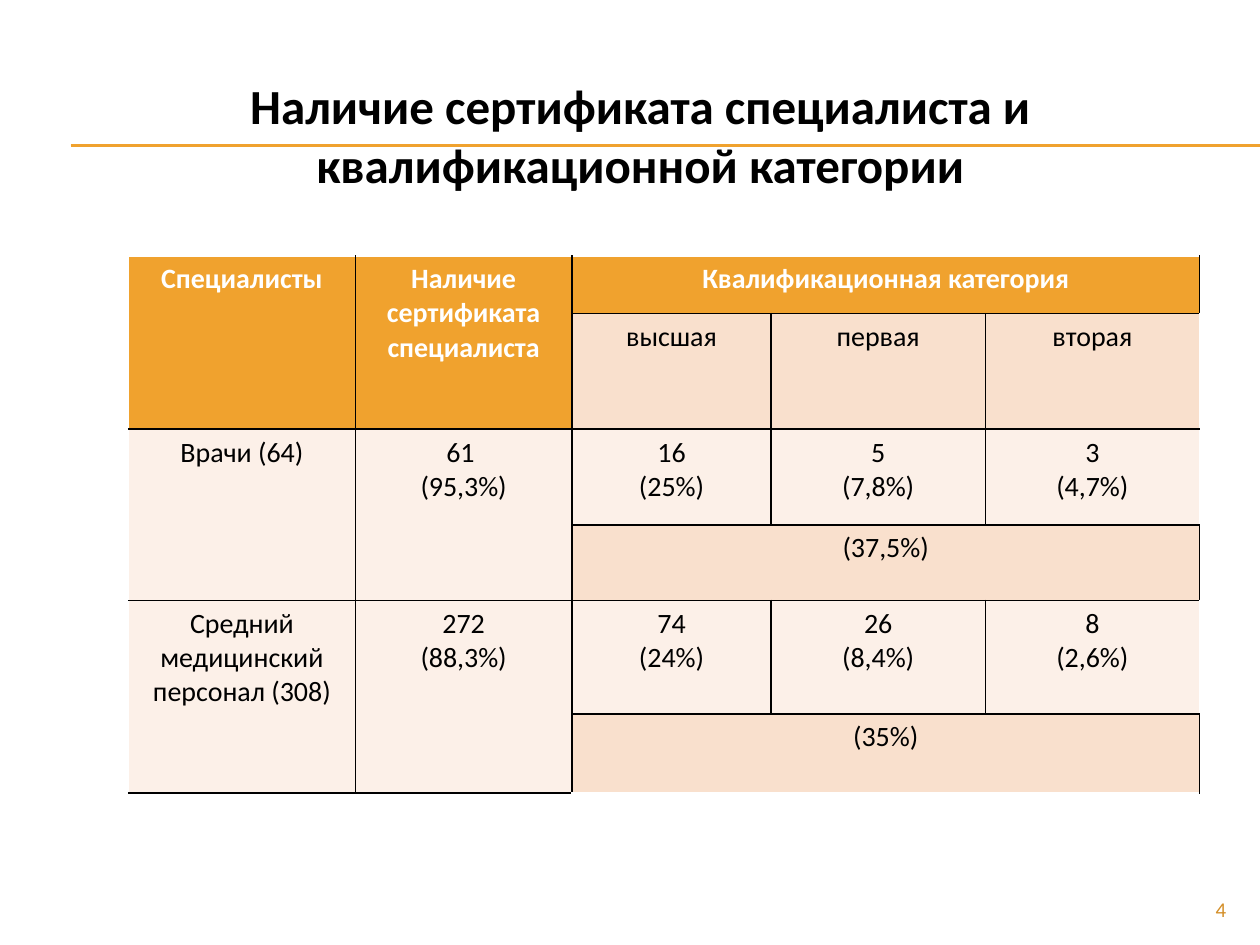
from lxml import etree
from pptx import Presentation
from pptx.dml.color import RGBColor
from pptx.enum.shapes import MSO_CONNECTOR
from pptx.enum.text import MSO_ANCHOR, PP_ALIGN
from pptx.oxml.ns import qn
from pptx.util import Inches, Pt

CENTER, RIGHT = PP_ALIGN.CENTER, PP_ALIGN.RIGHT
TOP, MIDDLE = MSO_ANCHOR.TOP, MSO_ANCHOR.MIDDLE
STRAIGHT = MSO_CONNECTOR.STRAIGHT

FONT = "Calibri"
ORANGE, DARK_ORANGE = "F0A22E", "D48F29"
PEACH, PALE_PEACH = "F9E0CD", "FCF0E8"
BLACK, WHITE = "000000", "FFFFFF"

TITLE = "Наличие сертификата специалиста и квалификационной категории"
PAGE_NUMBER = "4"
RULE_HEIGHTS = (1.15, 1.16)

TABLE_LEFT, TABLE_TOP = 1.02, 2.03
COLUMN_WIDTHS = [1.8, 1.72, 1.58, 1.7, 1.7]
ROW_HEIGHTS = [0.46, 0.89, 0.76, 0.6, 0.9, 0.63]

# Row, column, rows spanned, columns spanned, fill, text
CELLS = [
    (0, 0, 2, 1, ORANGE, "Специалисты"),
    (0, 1, 2, 1, ORANGE, "Наличие сертификата\nспециалиста"),
    (0, 2, 1, 3, ORANGE, "Квалификационная категория"),
    (1, 2, 1, 1, PEACH, "высшая"),
    (1, 3, 1, 1, PEACH, "первая"),
    (1, 4, 1, 1, PEACH, "вторая"),
    (2, 0, 2, 1, PALE_PEACH, "Врачи (64)"),
    (2, 1, 2, 1, PALE_PEACH, "61 \n(95,3%)"),
    (2, 2, 1, 1, PALE_PEACH, "16\n(25%)"),
    (2, 3, 1, 1, PALE_PEACH, "5\n(7,8%)"),
    (2, 4, 1, 1, PALE_PEACH, "3\n(4,7%)"),
    (3, 2, 1, 3, PEACH, "(37,5%)"),
    (4, 0, 2, 1, PALE_PEACH, "Средний медицинский персонал (308)"),
    (4, 1, 2, 1, PALE_PEACH, "272\n(88,3%)"),
    (4, 2, 1, 1, PALE_PEACH, "74\n(24%)"),
    (4, 3, 1, 1, PALE_PEACH, "26\n(8,4%)"),
    (4, 4, 1, 1, PALE_PEACH, "8\n(2,6%)"),
    (5, 2, 1, 3, PEACH, "(35%)"),
]


def color(hex_string):
    return RGBColor.from_string(hex_string)


def write(text_frame, text, size, text_color, bold=False, alignment=CENTER):
    text_frame.text = text
    for paragraph in text_frame.paragraphs:
        paragraph.alignment = alignment
        for run in paragraph.runs:
            run.font.name = FONT
            run.font.size = Pt(size)
            run.font.bold = bold
            run.font.color.rgb = color(text_color)


def add_text(slide, left, top, width, height, text, anchor, **style):
    box = slide.shapes.add_textbox(*map(Inches, (left, top, width, height)))
    box.text_frame.word_wrap = True
    box.text_frame.vertical_anchor = anchor
    write(box.text_frame, text, **style)


def add_rule(slide, height):
    rule = slide.shapes.add_connector(
        STRAIGHT, Inches(0.56), Inches(height), Inches(10), Inches(height))
    rule.line.color.rgb = color(ORANGE)
    rule.line.width = Pt(0.75)
    etree.SubElement(rule._element.spPr, qn("a:effectLst"))


def set_borders(cell, row, column):
    """Draw white borders on the table's outer edge and black ones inside."""
    outer_edges = {
        "a:lnL": column == 0,
        "a:lnR": column == len(COLUMN_WIDTHS) - 1,
        "a:lnT": row == 0,
        "a:lnB": row == len(ROW_HEIGHTS) - 1,
    }
    properties = cell._tc.get_or_add_tcPr()
    for tag, is_outer in outer_edges.items():
        line = etree.SubElement(properties, qn(tag), w=str(Pt(1)))
        fill = etree.SubElement(line, qn("a:solidFill"))
        etree.SubElement(fill, qn("a:srgbClr"), val=WHITE if is_outer else BLACK)


def add_table(slide):
    table = slide.shapes.add_table(
        len(ROW_HEIGHTS), len(COLUMN_WIDTHS), Inches(TABLE_LEFT), Inches(TABLE_TOP),
        Inches(sum(COLUMN_WIDTHS)), Inches(sum(ROW_HEIGHTS))).table
    for column, width in zip(table.columns, COLUMN_WIDTHS):
        column.width = Inches(width)
    for row, height in zip(table.rows, ROW_HEIGHTS):
        row.height = Inches(height)

    for top, left, row_span, column_span, fill, text in CELLS:
        bottom, right = top + row_span - 1, left + column_span - 1
        cell = table.cell(top, left)
        if row_span * column_span > 1:
            cell.merge(table.cell(bottom, right))
        for row in range(top, bottom + 1):
            for column in range(left, right + 1):
                part = table.cell(row, column)
                set_borders(part, row, column)
                part.fill.solid()
                part.fill.fore_color.rgb = color(fill)
        is_header = fill == ORANGE
        write(cell.text_frame, text, 16, WHITE if is_header else BLACK, is_header)


def main():
    presentation = Presentation()
    presentation.slide_width, presentation.slide_height = Inches(10), Inches(7.5)
    slide = presentation.slides.add_slide(presentation.slide_layouts[6])
    for height in RULE_HEIGHTS:
        add_rule(slide, height)
    add_table(slide)
    add_text(slide, 9, 7.08, 0.83, 0.27, PAGE_NUMBER, MIDDLE,
             size=12, text_color=DARK_ORANGE, alignment=RIGHT)
    add_text(slide, 0.55, 0.55, 9.06, 1.04, TITLE, TOP,
             size=28, text_color=BLACK, bold=True)
    presentation.save("out.pptx")


if __name__ == "__main__":
    main()
